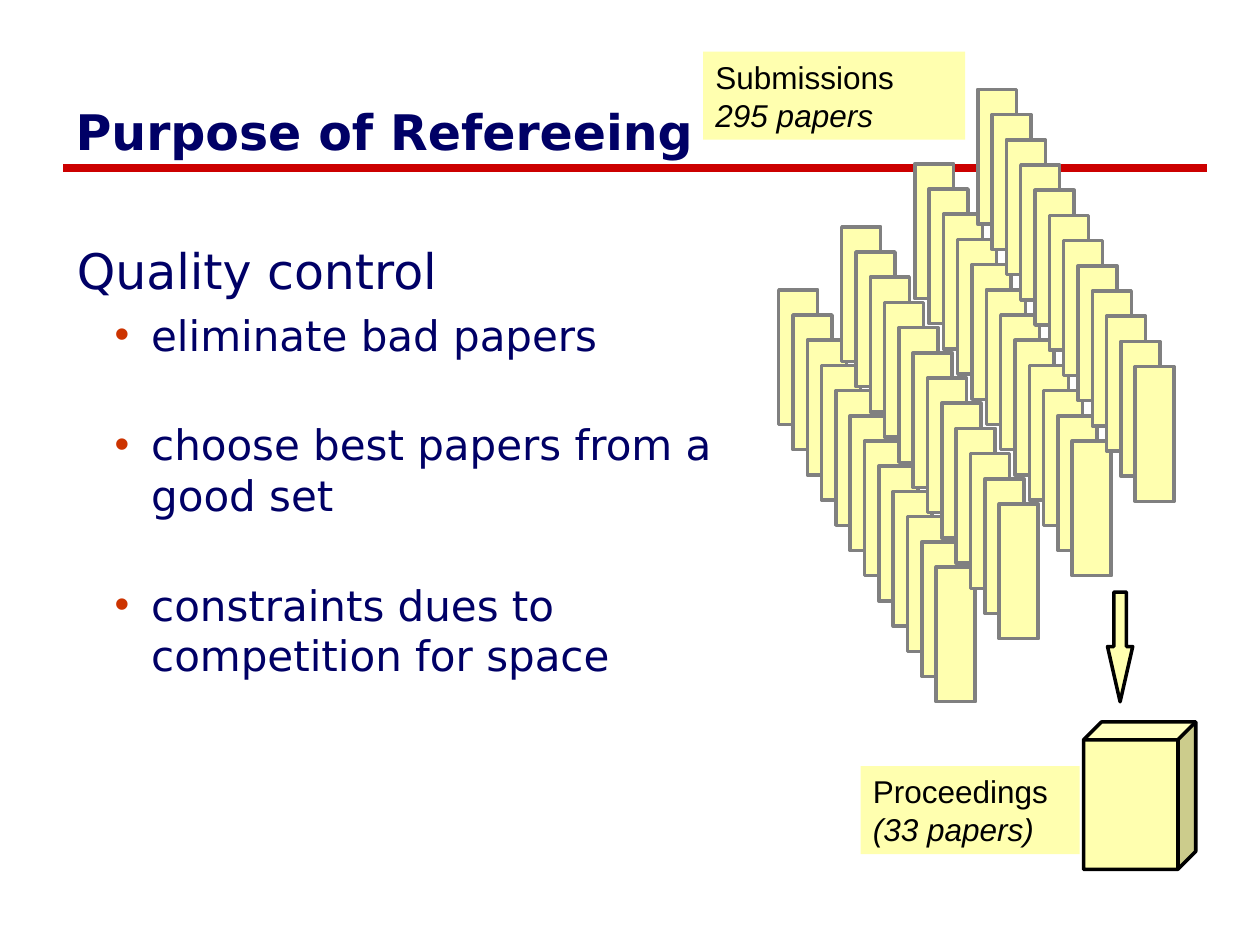
"""Build the slide on the purpose of refereeing."""
import dataclasses

import pptx
import pptx.dml.color
import pptx.enum.shapes
import pptx.enum.text
import pptx.oxml
import pptx.oxml.ns
import pptx.util

Inches = pptx.util.Inches
Pt = pptx.util.Pt
Kind = pptx.enum.shapes.MSO_SHAPE
NAMESPACE = pptx.oxml.ns.nsdecls("a")


@dataclasses.dataclass(frozen=True)
class Theme:
    navy: str = "000066"
    red: str = "CC0000"
    bullet: str = "CC3300"
    paper: str = "FFFFAF"
    edge: str = "808080"
    black: str = "000000"
    main_font: str = "DejaVu Sans"
    label_font: str = "Arial"
    heading_size: int = 28
    bullet_size: int = 24
    label_size: int = 18
    outline: int = 2
    rule: float = 4.5


def color(code):
    return pptx.dml.color.RGBColor.from_string(code)


class Painter:
    """Hold the theme and the current page, and draw elements on it."""

    def __init__(self, theme, page):
        self.theme = theme
        self.page = page

    def place(self, shape, left, top, width, height):
        shape.left, shape.top = Inches(left), Inches(top)
        shape.width, shape.height = Inches(width), Inches(height)

    def style(self, para, font, size, code, bold=False, italic=False):
        for span in para.runs:
            span.font.name = font
            span.font.size = Pt(size)
            span.font.color.rgb = color(code)
            span.font.bold = bold
            span.font.italic = italic

    def title(self, text, *bounds):
        box = self.page.shapes.title
        self.place(box, *bounds)
        frame = box.text_frame
        frame.text = text
        frame.auto_size = pptx.enum.text.MSO_AUTO_SIZE.NONE
        frame.vertical_anchor = pptx.enum.text.MSO_ANCHOR.MIDDLE
        para = frame.paragraphs[0]
        para.alignment = pptx.enum.text.PP_ALIGN.LEFT
        self.style(para, self.theme.main_font, self.theme.heading_size, self.theme.navy, bold=True)

    def body(self, heading, items, *bounds):
        box = self.page.placeholders[1]
        self.place(box, *bounds)
        frame = box.text_frame
        frame.text = "\n".join([heading, *items])
        frame.auto_size = pptx.enum.text.MSO_AUTO_SIZE.NONE
        first, *others = frame.paragraphs
        self.style(first, self.theme.main_font, self.theme.heading_size, self.theme.navy)
        self.indent(first, 0, 0)
        first._p.pPr.append(pptx.oxml.parse_xml(f"<a:buNone {NAMESPACE}/>"))
        for para in others:
            para.level = 1
            para.space_before = Pt(5.5)
            para.space_after = Pt(28.5)
            self.style(para, self.theme.main_font, self.theme.bullet_size, self.theme.navy)
            self.indent(para, 0.59, -0.29)
            for xml in (
                f'<a:buClr {NAMESPACE}><a:srgbClr val="{self.theme.bullet}"/></a:buClr>',
                f'<a:buChar {NAMESPACE} char="•"/>',
            ):
                para._p.pPr.append(pptx.oxml.parse_xml(xml))

    def indent(self, para, margin, hanging):
        properties = para._p.get_or_add_pPr()
        properties.set("marL", str(Inches(margin)))
        properties.set("indent", str(Inches(hanging)))

    def rule(self, left, right, top):
        line = self.page.shapes.add_connector(
            pptx.enum.shapes.MSO_CONNECTOR.STRAIGHT,
            Inches(left), Inches(top), Inches(right), Inches(top))
        line.line.color.rgb = color(self.theme.red)
        line.line.width = Pt(self.theme.rule)
        line._element.spPr.append(pptx.oxml.parse_xml(f"<a:effectLst {NAMESPACE}/>"))

    def shape(self, kind, *bounds, edge=None, adjustments=(), parent=None):
        owner = parent or self.page
        shape = owner.shapes.add_shape(kind, *map(Inches, bounds))
        shape.shadow.inherit = False
        shape.fill.solid()
        shape.fill.fore_color.rgb = color(self.theme.paper)
        if edge:
            shape.line.color.rgb = color(edge)
            shape.line.width = Pt(self.theme.outline)
        else:
            shape.line.fill.background()
        for index, value in enumerate(adjustments):
            shape.adjustments[index] = value
        return shape

    def stack(self, left, top, count=12):
        group = self.page.shapes.add_group_shape()
        for index in range(count):
            self.shape(Kind.RECTANGLE, left + 1.25 * index / (count - 1), top + 0.2 * index,
                       0.31, 1.07, edge=self.theme.edge, parent=group)

    def label(self, name, amount, *bounds):
        frame = self.shape(Kind.RECTANGLE, *bounds).text_frame
        frame.text = f"{name}\n{amount}"
        frame.word_wrap = True
        frame.vertical_anchor = pptx.enum.text.MSO_ANCHOR.TOP
        for para, italic in zip(frame.paragraphs, (False, True)):
            para.alignment = pptx.enum.text.PP_ALIGN.LEFT
            self.style(para, self.theme.label_font, self.theme.label_size,
                       self.theme.black, italic=italic)


def main():
    deck = pptx.Presentation()
    deck.slide_width, deck.slide_height = Inches(10), Inches(7.5)
    theme = Theme()
    painter = Painter(theme, deck.slides.add_slide(deck.slide_layouts[1]))

    painter.rule(0.5, 9.58, 1.33)
    painter.title("Purpose of Refereeing", 0.5, 0.75, 9.08, 0.58)
    painter.body(
        "Quality control",
        ["eliminate bad papers",
         "choose best papers from a \vgood set",
         "constraints dues to\vcompetition for space"],
        0.51, 1.86, 9.06, 5.2)

    for left, top in ((6.18, 2.3), (6.68, 1.8), (7.26, 1.3), (7.76, 0.71)):
        painter.stack(left, top)

    painter.label("Submissions", "295 papers", 5.58, 0.41, 2.08, 0.7)
    painter.shape(Kind.CUBE, 8.6, 5.73, 0.89, 1.17, edge=theme.black, adjustments=[0.16])
    painter.label("Proceedings", "(33 papers)", 6.83, 6.08, 1.74, 0.7)
    painter.shape(Kind.DOWN_ARROW, 8.79, 4.7, 0.2, 0.87, edge=theme.black, adjustments=[0.5, 2.19])

    deck.save("out.pptx")


if __name__ == "__main__":
    main()
